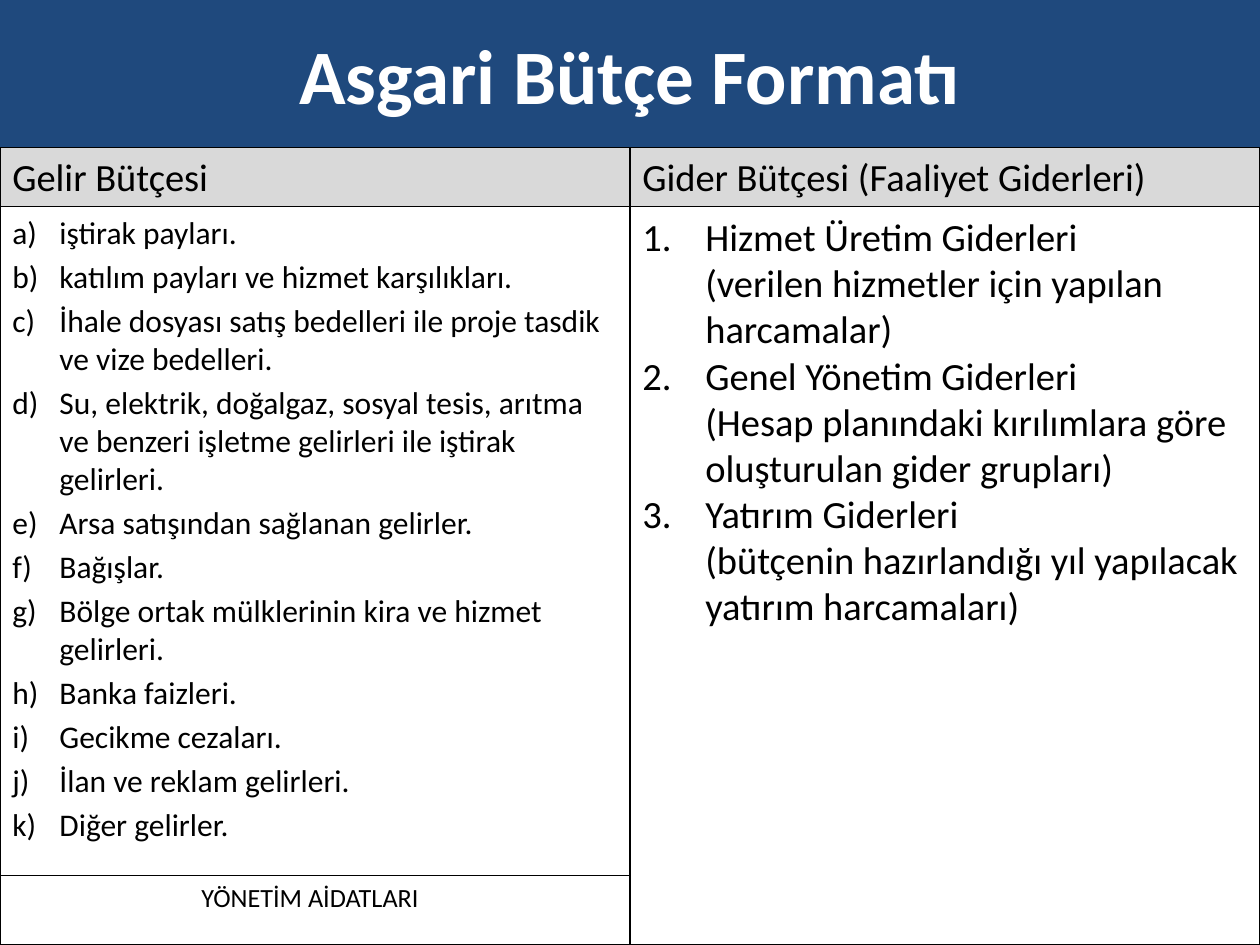
from lxml import etree
from pptx import Presentation
from pptx.dml.color import RGBColor
from pptx.enum.shapes import MSO_SHAPE
from pptx.enum.text import MSO_ANCHOR, PP_ALIGN
from pptx.oxml.ns import qn
from pptx.util import Cm, Pt

RECTANGLE = MSO_SHAPE.RECTANGLE
TOP, MIDDLE = MSO_ANCHOR.TOP, MSO_ANCHOR.MIDDLE
LEFT, CENTER = PP_ALIGN.LEFT, PP_ALIGN.CENTER

WIDTH, HEIGHT = 25.4, 19.05
HALF = WIDTH / 2
HEADER_TOP, BODY_TOP, DUES_TOP = 2.97, 4.17, 17.65


def add_box(left, top, width, height, lines, size, fill=None, border="000000",
            color="000000", bold=False, align=LEFT, anchor=TOP):
    shape = slide.shapes.add_shape(RECTANGLE, Cm(left), Cm(top), Cm(width), Cm(height))
    shape.shadow.inherit = False
    if fill:
        shape.fill.solid()
        shape.fill.fore_color.rgb = RGBColor.from_string(fill)
    else:
        shape.fill.background()
    if border:
        shape.line.color.rgb = RGBColor.from_string(border)
        shape.line.width = Pt(0.75)
    else:
        shape.line.fill.background()
    frame = shape.text_frame
    frame.word_wrap = True
    frame.vertical_anchor = anchor
    for index, line in enumerate(lines):
        paragraph = frame.paragraphs[0] if index == 0 else frame.add_paragraph()
        paragraph.text = line
        paragraph.alignment = align
        paragraph.font.name = "Calibri"
        paragraph.font.size = Pt(size)
        paragraph.font.bold = bold
        paragraph.font.color.rgb = RGBColor.from_string(color)
    return frame.paragraphs


def indent(paragraph, margin, numbering=None, start=1):
    """Indent a paragraph, with a hanging number when numbering is given."""
    properties = paragraph._p.get_or_add_pPr()
    properties.set("marL", str(Cm(margin)))
    properties.set("indent", str(-Cm(margin) if numbering else 0))
    if numbering:
        number = etree.Element(qn("a:buAutoNum"), type=numbering, startAt=str(start))
        properties.find(qn("a:defRPr")).addprevious(number)


presentation = Presentation()
presentation.slide_width, presentation.slide_height = Cm(WIDTH), Cm(HEIGHT)
slide = presentation.slides.add_slide(presentation.slide_layouts[6])

# Title band
add_box(0, 0, WIDTH, HEADER_TOP, ["Asgari Bütçe Formatı"], 44, fill="1F497D",
        border=None, color="FFFFFF", bold=True, align=CENTER, anchor=MIDDLE)

# Column headers
headers = ["Gelir Bütçesi", "Gider Bütçesi (Faaliyet Giderleri)"]
for column, header in enumerate(headers):
    add_box(column * HALF, HEADER_TOP, HALF, BODY_TOP - HEADER_TOP, [header], 22,
            fill="D9D9D9")

# Income items, lettered
income_items = [
    "iştirak payları.",
    "katılım payları ve hizmet karşılıkları.",
    "İhale dosyası satış bedelleri ile proje tasdik ve vize bedelleri.",
    "Su, elektrik, doğalgaz, sosyal tesis, arıtma ve benzeri işletme gelirleri ile "
    "iştirak gelirleri.",
    "Arsa satışından sağlanan gelirler.",
    "Bağışlar.",
    "Bölge ortak mülklerinin kira ve hizmet gelirleri.",
    "Banka faizleri.",
    "Gecikme cezaları.",
    "İlan ve reklam gelirleri.",
    "Diğer gelirler.",
]
for paragraph in add_box(0, BODY_TOP, HALF, DUES_TOP - BODY_TOP, income_items, 18):
    paragraph.space_before = Pt(3.6)
    indent(paragraph, 0.95, "alphaLcParenR")

# Expense groups, each numbered heading followed by its explanation
expense_lines = [
    "Hizmet Üretim Giderleri",
    "(verilen hizmetler için yapılan harcamalar)",
    "Genel Yönetim Giderleri",
    "(Hesap planındaki kırılımlara göre oluşturulan gider grupları)",
    "Yatırım Giderleri",
    "(bütçenin hazırlandığı yıl yapılacak yatırım harcamaları)",
]
expenses = add_box(HALF, BODY_TOP, HALF, HEIGHT - BODY_TOP, expense_lines, 22)
for index, paragraph in enumerate(expenses):
    numbering = "arabicPeriod" if index % 2 == 0 else None
    indent(paragraph, 1.27, numbering, index // 2 + 1)

# Management dues
dues = add_box(0, DUES_TOP, HALF, HEIGHT - DUES_TOP, ["YÖNETİM AİDATLARI"], 15)
indent(dues[0], 3.81)

presentation.save("out.pptx")
